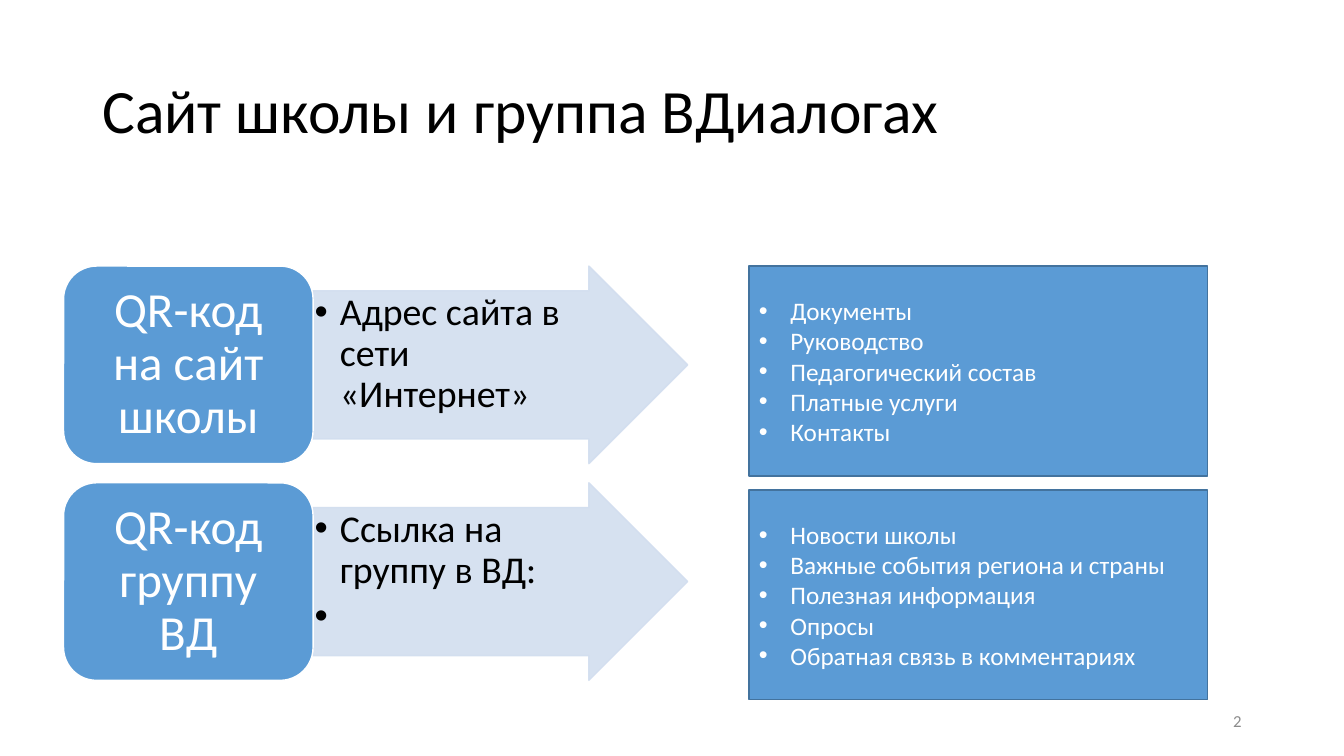
"""Builds the slide about the school website and its social network group."""
import pptx
import pptx.dml.color
import pptx.enum.shapes
import pptx.enum.text
import pptx.oxml.ns
import pptx.util
from lxml import etree

Pt = pptx.util.Pt
RGBColor = pptx.dml.color.RGBColor
MSO_SHAPE = pptx.enum.shapes.MSO_SHAPE
PP_ALIGN = pptx.enum.text.PP_ALIGN
MSO_ANCHOR = pptx.enum.text.MSO_ANCHOR
qn = pptx.oxml.ns.qn

TITLE = "Сайт школы и группа ВДиалогах"
PAGE = "2"
ROWS = [
    {
        "label": "QR-код на сайт школы",
        "arrow": ["Адрес сайта в сети «Интернет»"],
        "panel": ["Документы", "Руководство", "Педагогический состав",
                  "Платные услуги", "Контакты"],
    },
    {
        "label": "QR-код группу ВД",
        "arrow": ["Ссылка на группу в ВД:", " "],
        "panel": ["Новости школы", "Важные события региона и страны",
                  "Полезная информация", "Опросы",
                  "Обратная связь в комментариях"],
    },
]

FONT = "Calibri"
BLACK = RGBColor(0x00, 0x00, 0x00)
WHITE = RGBColor(0xFF, 0xFF, 0xFF)
GRAY = RGBColor(0x8C, 0x8C, 0x8C)
BLUE = RGBColor(0x5B, 0x9B, 0xD5)
DARK_BLUE = RGBColor(0x43, 0x73, 0x9E)
PALE_BLUE = RGBColor(0xD2, 0xDE, 0xEF)

TOP = 190.1
ROW_STEP = 154.8
PANEL_STEP = 159.8
ROW_H = 141.1
PANEL_H = 149.8
LABEL_X, LABEL_W = 45.4, 178.2
ARROW_X, ARROW_W = 223.4, 267.8
PANEL_X, PANEL_W = 535, 327.6
DEFAULT_INSETS = (7.2, 3.6, 7.2, 3.6)


def write(sp, lines, size, color, align=PP_ALIGN.LEFT, anchor=MSO_ANCHOR.MIDDLE,
          insets=DEFAULT_INSETS, spacing=1.0, after=0, indent=0):
    tf = sp.text_frame
    tf.word_wrap = True
    tf.vertical_anchor = anchor
    (tf.margin_left, tf.margin_top,
     tf.margin_right, tf.margin_bottom) = map(Pt, insets)
    for i, line in enumerate(lines):
        p = tf.paragraphs[0] if i == 0 else tf.add_paragraph()
        p.text = line
        p.alignment = align
        p.line_spacing = spacing
        p.space_after = Pt(after)
        p.font.name = FONT
        p.font.size = Pt(size)
        p.font.color.rgb = color
        if indent:
            add_bullet(p, indent)


def add_bullet(p, indent):
    pPr = p._p.get_or_add_pPr()
    pPr.set("marL", str(Pt(indent)))
    pPr.set("indent", str(-Pt(indent)))
    font = etree.Element(qn("a:buFont"), typeface="Arial")
    char = etree.Element(qn("a:buChar"), char="•")
    defaults = pPr.find(qn("a:defRPr"))
    defaults.addprevious(font)
    defaults.addprevious(char)


def add_text(slide, box, lines, size, color, **style):
    write(slide.shapes.add_textbox(*map(Pt, box)), lines, size, color, **style)


def add_block(slide, kind, box, fill, line):
    sp = slide.shapes.add_shape(kind, *map(Pt, box))
    sp.shadow.inherit = False
    sp.fill.solid()
    sp.fill.fore_color.rgb = fill
    sp.line.color.rgb = line
    sp.line.width = Pt(1)
    return sp


def add_row(slide, i, row):
    y = TOP + i * ROW_STEP
    arrow = add_block(slide, MSO_SHAPE.RIGHT_ARROW,
                      (ARROW_X, y, ARROW_W, ROW_H), PALE_BLUE, PALE_BLUE)
    arrow.adjustments[0] = 0.75
    arrow.adjustments[1] = 0.5
    for color in arrow._element.spPr.iter(qn("a:srgbClr")):
        etree.SubElement(color, qn("a:alpha"), val="90000")
    write(arrow, row["arrow"], 27, BLACK, anchor=MSO_ANCHOR.TOP,
          insets=(1.4, 1.4, 37.1, 1.4), spacing=0.9, after=4, indent=18)

    label = add_block(slide, MSO_SHAPE.ROUNDED_RECTANGLE,
                      (LABEL_X, y, LABEL_W, ROW_H), BLUE, WHITE)
    write(label, [row["label"]], 35, WHITE, align=PP_ALIGN.CENTER,
          insets=(10.8, 5, 10.8, 5), spacing=0.9)

    panel = add_block(slide, MSO_SHAPE.RECTANGLE,
                      (PANEL_X, TOP + i * PANEL_STEP, PANEL_W, PANEL_H),
                      BLUE, DARK_BLUE)
    write(panel, row["panel"], 18, WHITE, indent=22.5)


def main():
    prs = pptx.Presentation()
    prs.slide_width, prs.slide_height = Pt(960), Pt(540)
    slide = prs.slides.add_slide(prs.slide_layouts[6])
    add_text(slide, (66, 28.8, 828, 104.4), [TITLE], 44, BLACK, spacing=0.9)
    add_text(slide, (678, 500.5, 216, 28.8), [PAGE], 12, GRAY,
             align=PP_ALIGN.RIGHT)
    for i, row in enumerate(ROWS):
        add_row(slide, i, row)
    prs.save("out.pptx")


if __name__ == "__main__":
    main()
